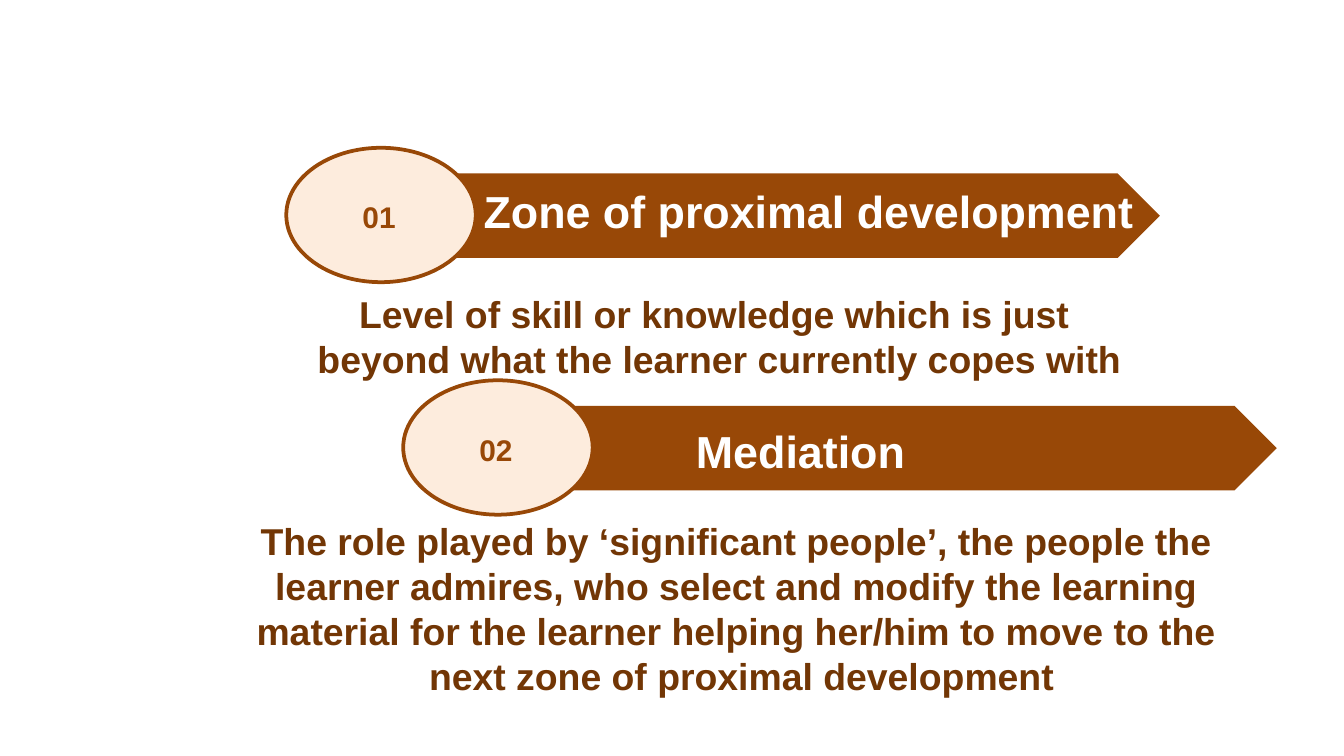
from pptx import Presentation
from pptx.dml.color import RGBColor
from pptx.enum.shapes import MSO_SHAPE
from pptx.enum.text import MSO_ANCHOR, PP_ALIGN
from pptx.util import Inches, Pt

BROWN = RGBColor(0x98, 0x48, 0x07)
DARK = RGBColor(0x72, 0x36, 0x05)
CREAM = RGBColor(0xFD, 0xEC, 0xDD)
WHITE = RGBColor(0xFF, 0xFF, 0xFF)


def write(frame, text, size=20, color=DARK, align=PP_ALIGN.CENTER,
          anchor=MSO_ANCHOR.TOP, wrap=True, font="Arial"):
    frame.word_wrap = wrap
    frame.vertical_anchor = anchor
    frame.text = text
    for para in frame.paragraphs:
        para.alignment = align
        for run in para.runs:
            run.font.name = font
            run.font.size = Pt(size)
            run.font.bold = True
            run.font.color.rgb = color


class Deck:
    def __init__(self, slide):
        self.slide = slide

    def shape(self, group, kind, box, fill, line=None):
        item = group.shapes.add_shape(kind, *map(Inches, box))
        item.shadow.inherit = False
        item.fill.solid()
        item.fill.fore_color.rgb = fill
        if line is None:
            item.line.fill.background()
        else:
            item.line.color.rgb = line
            item.line.width = Pt(2)

    def text(self, text, box, host=None, **style):
        host = host or self.slide
        item = host.shapes.add_textbox(*map(Inches, box))
        write(item.text_frame, text, **style)

    def banner(self, number, left, top):
        group = self.slide.shapes.add_group_shape()
        self.shape(group, MSO_SHAPE.PENTAGON,
                   (left + 1.19, top + 0.19, 5.31, 0.63), BROWN)
        self.shape(group, MSO_SHAPE.OVAL, (left, top, 1.41, 1), CREAM, BROWN)
        self.text(number, (left + 0.03, top + 0.13, 1.32, 0.77), group,
                  size=16, color=BROWN, anchor=MSO_ANCHOR.MIDDLE, wrap=False)

    def head(self, text, box):
        self.text(text, box, size=24, color=WHITE, align=PP_ALIGN.LEFT)


def main():
    show = Presentation()
    show.slide_width = Inches(10)
    show.slide_height = show.slide_width * 9 // 16
    deck = Deck(show.slides.add_slide(show.slide_layouts[6]))

    deck.banner("01", 2.13, 1.1)
    deck.head("Zone of proximal development", (3.5, 1.32, 5.12, 0.5))
    deck.banner("02", 3, 2.83)
    deck.head("Mediation", (5.08, 3.1, 2.13, 0.5))

    deck.text("Level of skill or knowledge which is just \n"
              "beyond what the learner currently copes with",
              (1.93, 2.12, 6.85, 0.77))
    deck.text("The role played by ‘significant people’, the people the \n"
              "learner admires, who select and modify the learning \n"
              "material for the learner helping her/him to move to the \n"
              "next zone of proximal development",
              (1.54, 3.81, 7.96, 1.45))
    show.save("out.pptx")


if __name__ == "__main__":
    main()
